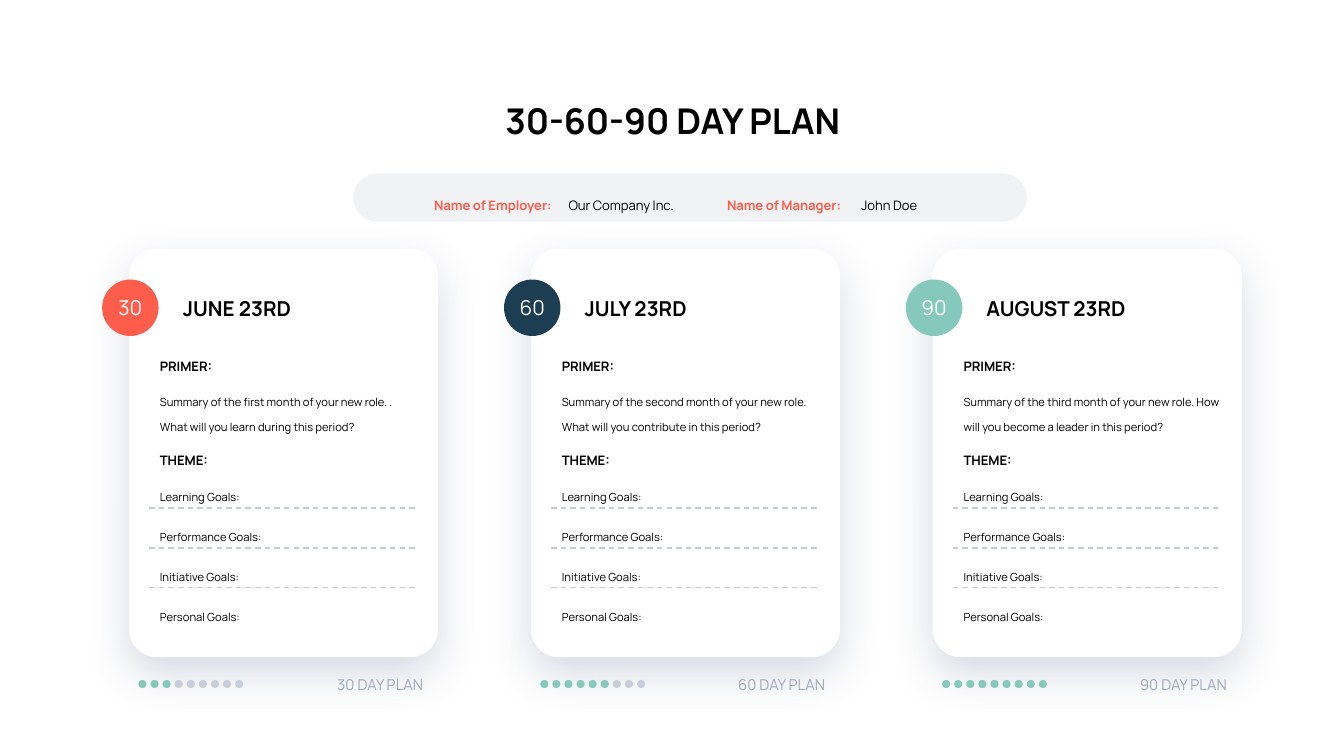
from lxml.etree import SubElement
from pptx import Presentation
from pptx.dml.color import RGBColor
from pptx.enum.dml import MSO_LINE
from pptx.enum.shapes import MSO_CONNECTOR, MSO_SHAPE
from pptx.enum.text import MSO_ANCHOR, PP_ALIGN
from pptx.oxml.ns import qn
from pptx.util import Inches, Pt

FONT = "Manrope"
COLORS = {
    "white": "FFFFFF",
    "black": "000000",
    "coral": "FF5D4C",
    "navy": "1C3D52",
    "mint": "85C9BD",
    "slate": "9EAABE",
    "rule": "C4CCD7",
    "shadow": "475D84",
}
SLIDE_WIDTH = 10
SLIDE_HEIGHT = SLIDE_WIDTH * 9 / 16
CARD_LEFT = 0.96
CARD_STEP = 2.99
GOAL_TOP = 3.52
GOAL_STEP = 0.89 / 3
DOT_COUNT = 9
DOT_STEP = 0.09
GOALS = ["Learning Goals:", "Performance Goals:", "Initiative Goals:", "Personal Goals:"]
PLANS = [
    ("30", "JUNE 23RD", "coral", 3, 1.97,
     "Summary of the first month of your new role. . What will you learn during this period?"),
    ("60", "JULY 23RD", "navy", 6, 1.97,
     "Summary of the second month of your new role. What will you contribute in this period?"),
    ("90", "AUGUST 23RD", "mint", 9, 2.04,
     "Summary of the third month of your new role. How will you become a leader in this period?"),
]


def style_font(font, size, color="black", bold=False):
    font.name = FONT
    font.size = Pt(size)
    font.bold = bold
    font.color.rgb = RGBColor.from_string(COLORS[color])


def set_margins(frame, left, top, right, bottom):
    frame.margin_left, frame.margin_top = Inches(left), Inches(top)
    frame.margin_right, frame.margin_bottom = Inches(right), Inches(bottom)


def add_text_box(shapes, left, top, width, height, side=0.04):
    box = shapes.add_textbox(Inches(left), Inches(top), Inches(width), Inches(height))
    frame = box.text_frame
    frame.word_wrap = True
    set_margins(frame, side, 0.04, side, 0.04)
    return frame


def write(paragraph, text, size, color="black", bold=False, spacing=None, align=None):
    paragraph.text = text
    paragraph.line_spacing = spacing
    paragraph.alignment = align
    style_font(paragraph.font, size, color, bold)


def add_shape(shapes, kind, left, top, width, height, color, alpha=None):
    shape = shapes.add_shape(kind, Inches(left), Inches(top), Inches(width), Inches(height))
    shape.shadow.inherit = False
    shape.fill.solid()
    shape.fill.fore_color.rgb = RGBColor.from_string(COLORS[color])
    shape.line.fill.background()
    if alpha is not None:
        fill_color = shape._element.spPr.find(qn("a:solidFill"))[0]
        SubElement(fill_color, qn("a:alpha"), val=str(alpha * 1000))
    return shape


def add_soft_shadow(shape):
    effects = shape._element.spPr.find(qn("a:effectLst"))
    shadow = SubElement(effects, qn("a:outerShdw"), blurRad=str(Pt(23)), dist=str(Pt(8.7)),
                        dir="5400000", algn="t", rotWithShape="0")
    color = SubElement(shadow, qn("a:srgbClr"), val=COLORS["shadow"])
    SubElement(color, qn("a:alpha"), val="22000")


def add_dashed_line(shapes, left, top, width):
    line = shapes.add_connector(MSO_CONNECTOR.STRAIGHT, Inches(left), Inches(top),
                                Inches(left + width), Inches(top))
    line.line.color.rgb = RGBColor.from_string(COLORS["rule"])
    line.line.width = Pt(0.75)
    line.line.dash_style = MSO_LINE.DASH
    SubElement(line._element.spPr, qn("a:effectLst"))


def add_name(shapes, left, width, label, name):
    paragraph = add_text_box(shapes, left, 1.35, width, 0.23).paragraphs[0]
    paragraph.line_spacing = 1.67
    for text, color, bold in [(label, "coral", True), ("\t" + name, "black", False)]:
        run = paragraph.add_run()
        run.text = text
        style_font(run.font, 7, color, bold)


def add_header(slide):
    title = add_text_box(slide.shapes, 3.6, 0.58, 2.81, 0.42, side=0.07)
    write(title.paragraphs[0], "30-60-90 DAY PLAN", 19, bold=True, spacing=1.36,
          align=PP_ALIGN.CENTER)
    shapes = slide.shapes.add_group_shape().shapes
    pill = add_shape(shapes, MSO_SHAPE.ROUNDED_RECTANGLE, 2.63, 1.29, 5.01, 0.36, "rule", alpha=25)
    pill.adjustments[0] = 0.5
    add_name(shapes, 3.19, 2.18, "Name of Employer:", "Our Company Inc.")
    add_name(shapes, 5.37, 1.7, "Name of Manager:", "John Doe")


def add_badge(shapes, left, days, color):
    badge = add_shape(shapes, MSO_SHAPE.OVAL, left, 2.08, 0.42, 0.42, color)
    frame = badge.text_frame
    frame.vertical_anchor = MSO_ANCHOR.MIDDLE
    set_margins(frame, 0.04, 0, 0.04, 0.01)
    write(frame.paragraphs[0], days, 11, "white", align=PP_ALIGN.CENTER)


def add_progress(slide, left, days, done):
    dots = slide.shapes.add_group_shape().shapes
    for index in range(DOT_COUNT):
        color, alpha = ("mint", None) if index < done else ("slate", 50)
        add_shape(dots, MSO_SHAPE.OVAL, left + 0.07 + index * DOT_STEP, 5.06, 0.06, 0.06,
                  color, alpha)
    caption = add_text_box(slide.shapes, left + 0.77, 4.99, 1.46, 0.21)
    caption.vertical_anchor = MSO_ANCHOR.MIDDLE
    write(caption.paragraphs[0], f"{days} DAY PLAN", 8, "slate", align=PP_ALIGN.RIGHT)


def add_goals(shapes, left):
    for index, goal in enumerate(GOALS):
        top = GOAL_TOP + index * GOAL_STEP
        frame = add_text_box(shapes, left + 0.19, top, 1.97, 0.23)
        write(frame.paragraphs[0], goal, 6, spacing=1.88)
        if index < len(GOALS) - 1:
            add_dashed_line(shapes, left + 0.15, top + 0.26, 1.99)


def add_card(slide, left, days, date, color, done, primer_width, summary):
    shapes = slide.shapes
    card = add_shape(shapes, MSO_SHAPE.ROUNDED_RECTANGLE, left, 1.85, 2.3, 3.04, "white")
    card.adjustments[0] = 0.09
    add_soft_shadow(card)
    add_badge(shapes, left - 0.2, days, color)

    heading = add_text_box(shapes, left + 0.33, 2.16, 1.97, 0.25, side=0.07)
    write(heading.paragraphs[0], date, 11, bold=True)

    primer = add_text_box(shapes, left + 0.19, 2.55, primer_width, 0.61)
    write(primer.paragraphs[0], "PRIMER:", 7, bold=True, spacing=1.67)
    body = primer.add_paragraph()
    write(body, summary, 6, spacing=1.88)
    body.space_before = Pt(5)

    theme = add_text_box(shapes, left + 0.19, 3.25, 1.97, 0.23)
    write(theme.paragraphs[0], "THEME:", 7, bold=True, spacing=1.67)
    add_goals(shapes, left)
    add_progress(slide, left, days, done)


def main():
    presentation = Presentation()
    presentation.slide_width = Inches(SLIDE_WIDTH)
    presentation.slide_height = Inches(SLIDE_HEIGHT)
    slide = presentation.slides.add_slide(presentation.slide_layouts[6])
    for index, plan in enumerate(PLANS):
        add_card(slide, CARD_LEFT + index * CARD_STEP, *plan)
    add_header(slide)
    presentation.save("out.pptx")


if __name__ == "__main__":
    main()
